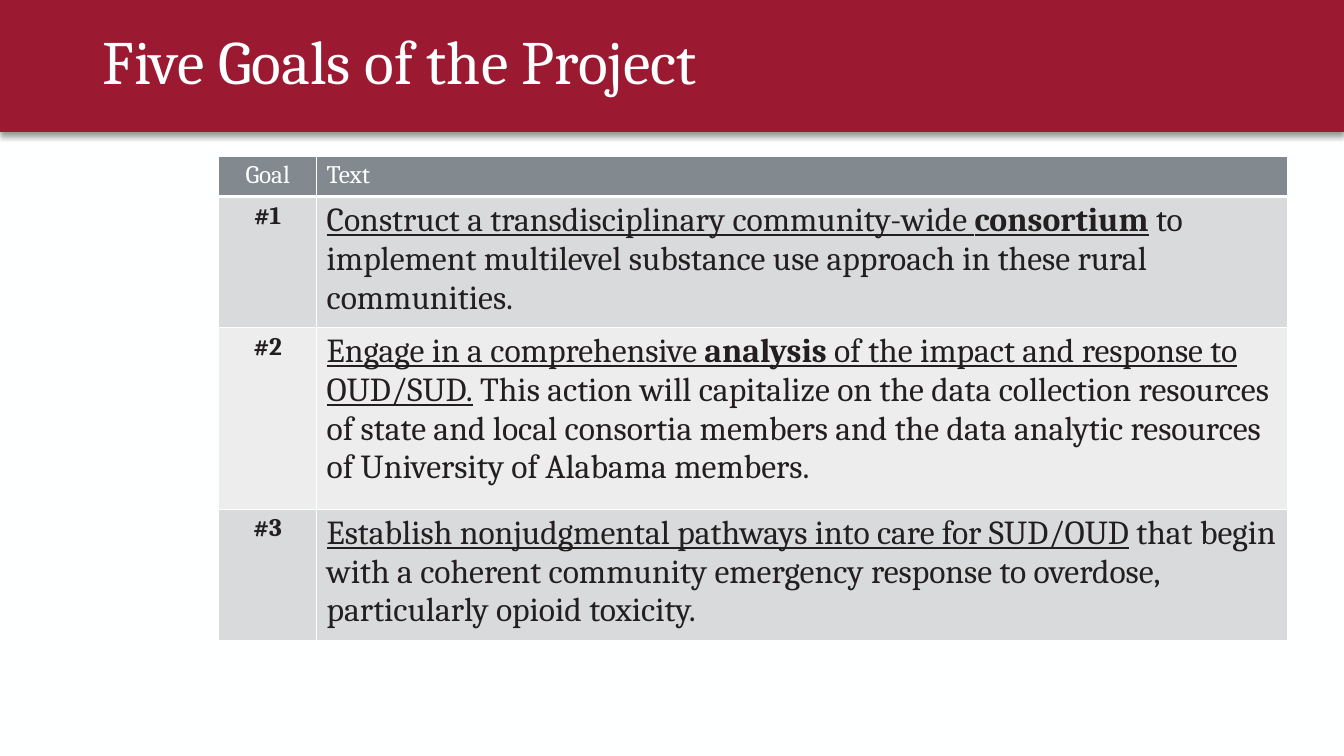
"""Build the slide that lists the first three goals of the project in a table."""
from lxml import etree
from pptx import Presentation
from pptx import util as u
from pptx.dml.color import RGBColor
from pptx.enum import shapes, text
from pptx.oxml import ns

WHITE = RGBColor(0xFE, 0xFF, 0xFF)
CRIMSON = RGBColor(0x9C, 0x19, 0x32)
SLATE = RGBColor(0x82, 0x8A, 0x8F)
INK = RGBColor(0x23, 0x1F, 0x20)
BANDS = (RGBColor(0xD8, 0xDA, 0xDB), RGBColor(0xED, 0xED, 0xEE))

TITLE = "Five Goals of the Project"
HEADINGS = ("Goal", "Text")
PLAIN, LINED, STRONG = "", "u", "bu"
GOALS = [
    ("#1", [
        ("Construct a transdisciplinary community-wide ", LINED),
        ("consortium", STRONG),
        (" to implement multilevel substance use approach in these rural communities.", PLAIN),
    ]),
    ("#2", [
        ("Engage in a comprehensive ", LINED),
        ("analysis ", STRONG),
        ("of the impact and response to OUD/SUD.", LINED),
        (" This action will capitalize on the data collection resources of state and local "
         "consortia members and the data analytic resources of University of Alabama members.", PLAIN),
    ]),
    ("#3", [
        ("Establish nonjudgmental pathways into care for SUD/OUD", LINED),
        (" that begin with a coherent community emergency response to overdose, "
         "particularly opioid toxicity.", PLAIN),
    ]),
]

WIDTH, HEIGHT = 13.33, 7.5
BANNER_HEIGHT = 1.31
TITLE_BOX = (0.92, 0.17, 11.5, 0.94)
TABLE_LEFT, TABLE_TOP = 2.17, 1.55
COLUMNS = (0.97, 9.63)
ROWS = (0.34, 1.11, 1.8, 1.3)
CENTER, LEFT = text.PP_ALIGN.CENTER, text.PP_ALIGN.LEFT


def write(paragraph, runs, size=18, color=INK, align=LEFT):
    """Fill a paragraph with (words, style) runs."""
    paragraph.alignment = align
    for words, style in runs:
        run = paragraph.add_run()
        run.text = words
        font = run.font
        font.name, font.size = "Cambria", u.Pt(size)
        font.color.rgb = color
        font.bold, font.underline = "b" in style, "u" in style


def add_border(cell, side, points):
    """Draw one edge of a table cell."""
    line = etree.SubElement(cell._tc.get_or_add_tcPr(), ns.qn("a:ln" + side), w=str(u.Pt(points)))
    fill = etree.SubElement(line, ns.qn("a:solidFill"))
    etree.SubElement(fill, ns.qn("a:srgbClr"), val=str(WHITE))


def add_banner(slide):
    """Draw the crimson band with its soft shadow and the title."""
    banner = slide.shapes.add_shape(
        shapes.MSO_SHAPE.RECTANGLE, 0, 0, u.Inches(WIDTH), u.Inches(BANNER_HEIGHT))
    banner.fill.solid()
    banner.fill.fore_color.rgb = CRIMSON
    banner.line.fill.background()
    banner.shadow.inherit = False
    effects = banner._element.spPr.find(ns.qn("a:effectLst"))
    shadow = etree.SubElement(effects, ns.qn("a:outerShdw"), blurRad=str(u.Pt(4)),
                              dist=str(u.Pt(3)), dir="5400000", rotWithShape="0")
    shade = etree.SubElement(shadow, ns.qn("a:srgbClr"), val="000000")
    etree.SubElement(shade, ns.qn("a:alpha"), val="40000")

    frame = slide.shapes.add_textbox(*map(u.Inches, TITLE_BOX)).text_frame
    frame.word_wrap = True
    frame.vertical_anchor = text.MSO_ANCHOR.MIDDLE
    frame.paragraphs[0].line_spacing = 0.9
    write(frame.paragraphs[0], [(TITLE, PLAIN)], size=44, color=WHITE)


def add_goals(slide):
    """Lay out the goals below a heading row."""
    table = slide.shapes.add_table(
        len(ROWS), len(COLUMNS), u.Inches(TABLE_LEFT), u.Inches(TABLE_TOP),
        u.Inches(sum(COLUMNS)), u.Inches(sum(ROWS))).table
    for column, width in zip(table.columns, COLUMNS):
        column.width = u.Inches(width)
    for row, height in zip(table.rows, ROWS):
        row.height = u.Inches(height)

    for r in range(len(ROWS)):
        for c, align in enumerate((CENTER, LEFT)):
            cell = table.cell(r, c)
            for side in "LRTB":
                add_border(cell, side, 3 if r == 0 and side == "B" else 1)
            cell.fill.solid()
            cell.fill.fore_color.rgb = BANDS[(r - 1) % 2] if r else SLATE
            paragraph = cell.text_frame.paragraphs[0]
            if r == 0:
                write(paragraph, [(HEADINGS[c], PLAIN)], color=WHITE, align=align)
            elif c == 0:
                write(paragraph, [(GOALS[r - 1][0], "b")], align=align)
            else:
                write(paragraph, GOALS[r - 1][1], size=24, align=align)


def main():
    """Assemble and save the slide."""
    deck = Presentation()
    deck.slide_width, deck.slide_height = u.Inches(WIDTH), u.Inches(HEIGHT)
    slide = deck.slides.add_slide(deck.slide_layouts[6])
    slide.background.fill.solid()
    slide.background.fill.fore_color.rgb = WHITE
    add_banner(slide)
    add_goals(slide)
    deck.save("out.pptx")


if __name__ == "__main__":
    main()
